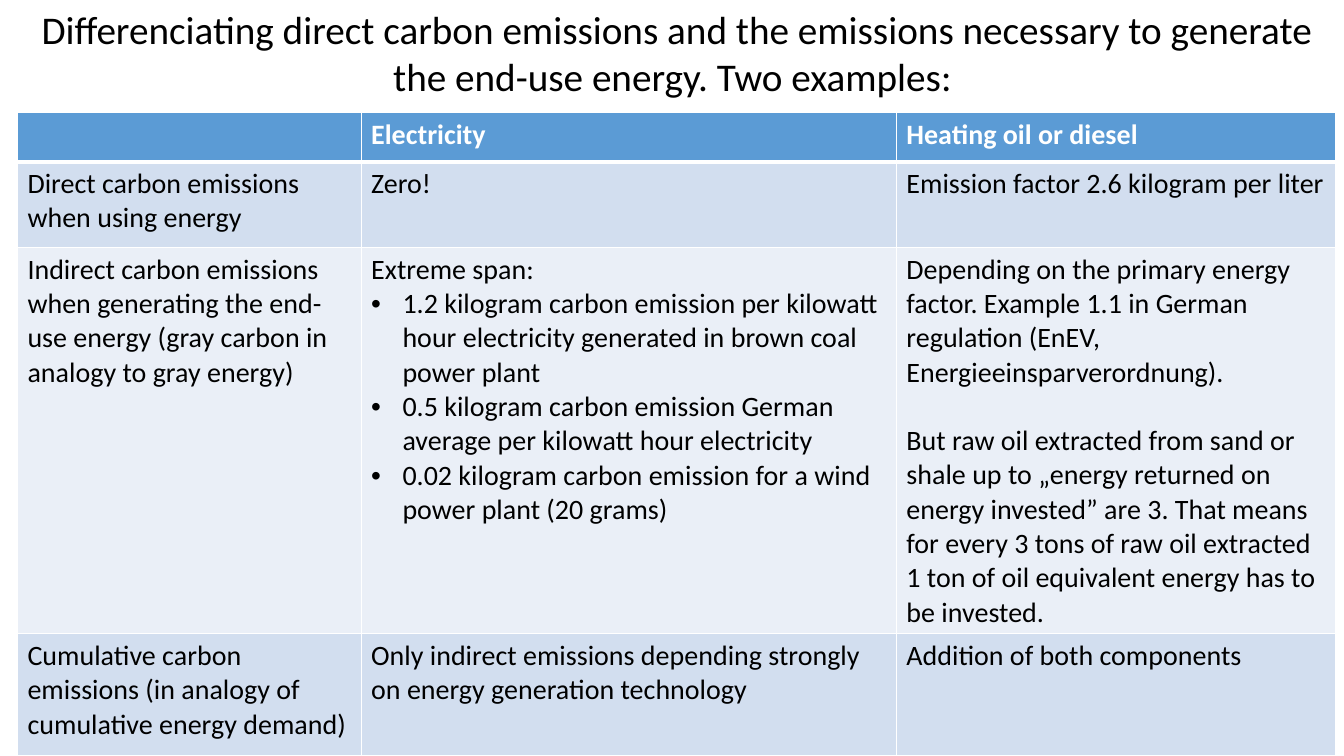
from dataclasses import dataclass

from lxml.etree import SubElement
from pptx import Presentation
from pptx.dml.color import RGBColor as RGB
from pptx.enum.text import PP_ALIGN as Align
from pptx.oxml.ns import qn
from pptx.util import Cm, Pt


@dataclass(frozen=True)
class Theme:
    font: str = "Calibri"
    title_size: int = 28
    body_size: int = 20
    paragraph_gap: float = 24.4
    ink: str = "000000"
    white: str = "FFFFFF"
    header: str = "5B9BD5"
    bands: tuple = ("D2DEEF", "EAEFF7")
    thin: int = 1
    thick: int = 3


THEME = Theme()
BULLET = "• "
GAP = "\n"  # leading mark: one line of space above the paragraph
COLUMN_WIDTHS = (8.66, 13.49, 11.07)
ROW_HEIGHTS = (1.24, 2.16, 9.73, 3.07)
ROWS = [
    [[], ["Electricity"], ["Heating oil or diesel"]],
    [
        ["Direct carbon emissions when using energy"],
        ["Zero!"],
        ["Emission factor 2.6 kilogram per liter"],
    ],
    [
        ["Indirect carbon emissions when generating the end-use energy "
         "(gray carbon in analogy to gray energy)"],
        ["Extreme span:",
         BULLET + "1.2 kilogram carbon emission per kilowatt hour electricity "
         "generated in brown coal power plant",
         BULLET + "0.5 kilogram carbon emission German average per kilowatt "
         "hour electricity",
         BULLET + "0.02 kilogram carbon emission for a wind power plant (20 grams)"],
        ["Depending on the primary energy factor. Example 1.1 in German "
         "regulation (EnEV, Energieeinsparverordnung).",
         GAP + "But raw oil extracted from sand or shale up to „energy returned "
         "on energy invested” are 3. That means for every 3 tons of raw oil "
         "extracted 1 ton of oil equivalent energy has to be invested."],
    ],
    [
        ["Cumulative carbon emissions (in analogy of cumulative energy demand)"],
        ["Only indirect emissions depending strongly on energy generation technology"],
        ["Addition of both components"],
    ],
]


def add_run(p, text, size, color, bold=False):
    r = p.add_run()
    r.text = text
    r.font.name = THEME.font
    r.font.size = Pt(size)
    r.font.bold = bold
    r.font.color.rgb = RGB.from_string(color)


def set_bullet(p):
    pPr = p._p.get_or_add_pPr()
    pPr.set("marL", str(Cm(0.79)))
    pPr.set("indent", str(-Cm(0.79)))
    SubElement(pPr, qn("a:buFont"), typeface="Arial")
    SubElement(pPr, qn("a:buChar"), char=BULLET.strip())


def set_borders(cell, top, bottom):
    tcPr = cell._tc.get_or_add_tcPr()
    widths = {"L": THEME.thin, "R": THEME.thin, "T": top, "B": bottom}
    for side, width in widths.items():
        ln = SubElement(tcPr, qn(f"a:ln{side}"), w=str(Pt(width)))
        fill = SubElement(ln, qn("a:solidFill"))
        SubElement(fill, qn("a:srgbClr"), val=THEME.white)


def fill_cell(cell, paragraphs, row):
    is_header = row == 0
    # Borders must precede the fill in the cell properties.
    set_borders(cell,
                top=THEME.thick if row == 1 else THEME.thin,
                bottom=THEME.thick if is_header else THEME.thin)
    cell.fill.solid()
    band = THEME.header if is_header else THEME.bands[(row - 1) % 2]
    cell.fill.fore_color.rgb = RGB.from_string(band)
    tf = cell.text_frame
    for i, text in enumerate(paragraphs):
        p = tf.add_paragraph() if i else tf.paragraphs[0]
        if text.startswith(GAP):
            p.space_before = Pt(THEME.paragraph_gap)
        if text.startswith(BULLET):
            set_bullet(p)
        add_run(p, text.removeprefix(BULLET).removeprefix(GAP), THEME.body_size,
                THEME.white if is_header else THEME.ink, is_header)


def add_title(s, text):
    sp = s.shapes.add_textbox(Cm(0.23), Cm(0), Cm(33.65), Cm(2.65))
    tf = sp.text_frame
    tf.word_wrap = True
    p = tf.paragraphs[0]
    p.alignment = Align.CENTER
    add_run(p, text, THEME.title_size, THEME.ink)


def add_emissions_table(s):
    frame = s.shapes.add_table(len(ROWS), len(COLUMN_WIDTHS), Cm(0.44), Cm(2.84),
                               Cm(sum(COLUMN_WIDTHS)), Cm(sum(ROW_HEIGHTS)))
    table = frame.table
    for column, width in zip(table.columns, COLUMN_WIDTHS):
        column.width = Cm(width)
    for i, (row, height) in enumerate(zip(table.rows, ROW_HEIGHTS)):
        row.height = Cm(height)
        for cell, paragraphs in zip(row.cells, ROWS[i]):
            fill_cell(cell, paragraphs, i)


def main():
    prs = Presentation()
    prs.slide_width, prs.slide_height = Cm(33.87), Cm(19.05)
    s = prs.slides.add_slide(prs.slide_layouts[6])
    add_title(s, "Differenciating direct carbon emissions and the emissions "
                 "necessary to generate the end-use energy. Two examples: ")
    add_emissions_table(s)
    prs.save("out.pptx")


if __name__ == "__main__":
    main()
